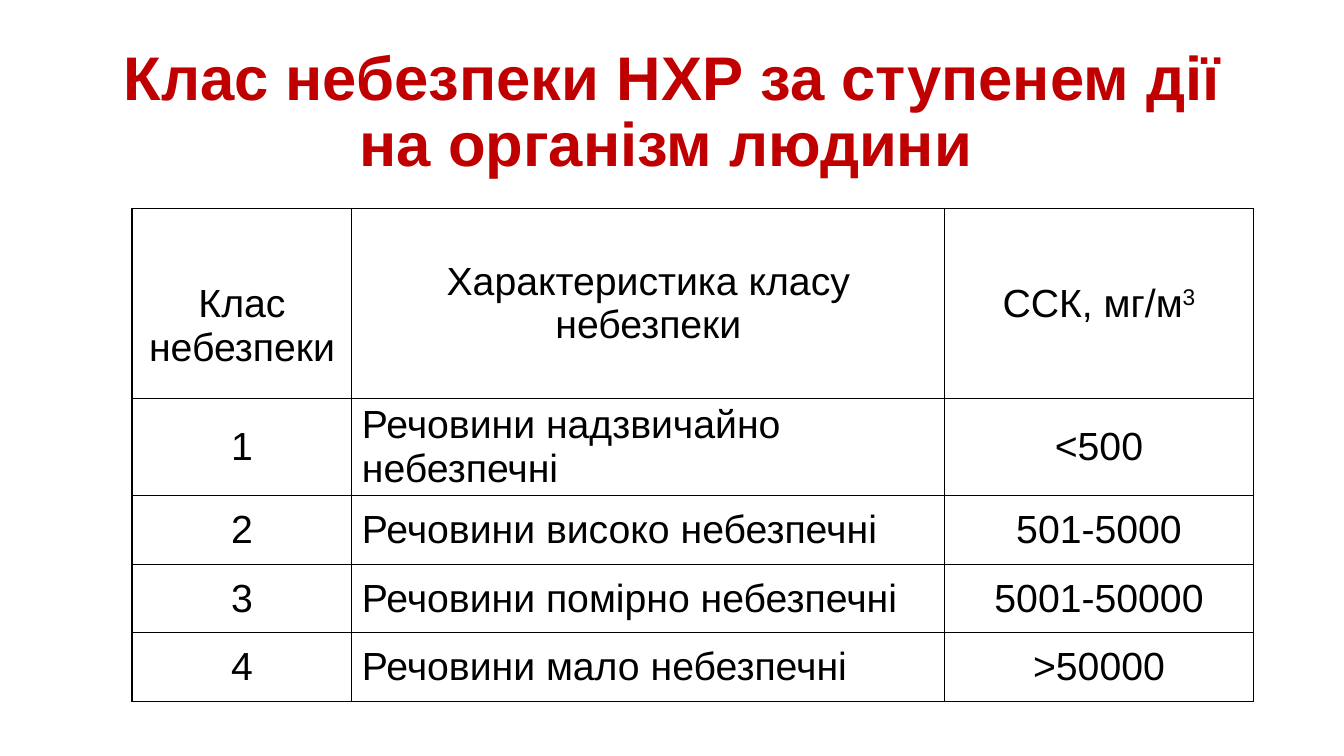
"""Build a slide with a table of chemical hazard classes."""
from lxml import etree
from pptx import Presentation
from pptx.dml.color import RGBColor
from pptx.enum.text import MSO_ANCHOR, PP_ALIGN
from pptx.oxml.ns import qn
from pptx.util import Inches, Pt

TITLE = "Клас небезпеки НХР за ступенем дії на організм людини"
HEADER = ("Клас небезпеки", "Характеристика класу небезпеки", "ССК, мг/м")
UNIT_POWER = "3"
CLASSES = [
    ("1", "Речовини надзвичайно небезпечні", "<500"),
    ("2", "Речовини високо небезпечні", "501-5000"),
    ("3", "Речовини помірно небезпечні", "5001-50000"),
    ("4", "Речовини мало небезпечні", ">50000"),
]

FONT = "Arial"
RED = RGBColor(0xC0, 0x00, 0x00)
BLACK = RGBColor(0x00, 0x00, 0x00)
WHITE = RGBColor(0xFF, 0xFF, 0xFF)
CENTER, LEFT = PP_ALIGN.CENTER, PP_ALIGN.LEFT
MIDDLE = MSO_ANCHOR.MIDDLE

TABLE_LEFT, TABLE_TOP = 1.31, 2.07
COLUMN_WIDTHS = (2.18, 5.88, 3.06)
HEADER_HEIGHT, CLASS_HEIGHT = 1.88, 0.68
HEADER_DROP = 0.49
DESCRIPTION_COLUMN = 1


def style(paragraph, size, color, align, bold=False):
    paragraph.alignment = align
    font = paragraph.font
    font.name, font.size, font.bold = FONT, Pt(size), bold
    font.color.rgb = color


def add_borders(cell):
    properties = cell._tc.get_or_add_tcPr()
    for position, side in enumerate(("lnL", "lnR", "lnT", "lnB")):
        line = etree.Element(qn(f"a:{side}"), w=str(Pt(1)))
        fill = etree.SubElement(line, qn("a:solidFill"))
        etree.SubElement(fill, qn("a:srgbClr"), val=str(BLACK))
        properties.insert(position, line)


def add_title(slide):
    box = slide.shapes.add_textbox(Inches(0.92), Inches(0.4), Inches(11.5), Inches(1.45))
    frame = box.text_frame
    frame.word_wrap = True
    frame.vertical_anchor = MIDDLE
    paragraph = frame.paragraphs[0]
    paragraph.line_spacing = 0.9
    style(paragraph, 44, RED, CENTER, bold=True)
    paragraph.add_run().text = TITLE
    ending = paragraph.add_run()
    ending.text = " "
    ending.font.size = Pt(32)


def add_class_table(slide):
    rows = [HEADER, *CLASSES]
    heights = [HEADER_HEIGHT] + [CLASS_HEIGHT] * len(CLASSES)
    table = slide.shapes.add_table(
        len(rows), len(HEADER), Inches(TABLE_LEFT), Inches(TABLE_TOP),
        Inches(sum(COLUMN_WIDTHS)), Inches(sum(heights))).table
    table.first_row = table.horz_banding = False
    for column, width in zip(table.columns, COLUMN_WIDTHS):
        column.width = Inches(width)
    for row_index, (values, height) in enumerate(zip(rows, heights)):
        table.rows[row_index].height = Inches(height)
        for column_index, value in enumerate(values):
            cell = table.cell(row_index, column_index)
            cell.text = value
            cell.vertical_anchor = MIDDLE
            cell.fill.solid()
            cell.fill.fore_color.rgb = WHITE
            add_borders(cell)
            is_description = row_index > 0 and column_index == DESCRIPTION_COLUMN
            style(cell.text_frame.paragraphs[0], 28, BLACK, LEFT if is_description else CENTER)
    table.cell(0, 0).margin_top = Inches(HEADER_DROP)
    power = table.cell(0, len(HEADER) - 1).text_frame.paragraphs[0].add_run()
    power.text = UNIT_POWER
    power._r.get_or_add_rPr().set("baseline", "30000")


def main():
    presentation = Presentation()
    presentation.slide_width, presentation.slide_height = Inches(13.33), Inches(7.5)
    slide = presentation.slides.add_slide(presentation.slide_layouts[6])
    add_class_table(slide)
    add_title(slide)
    presentation.save("out.pptx")


if __name__ == "__main__":
    main()
